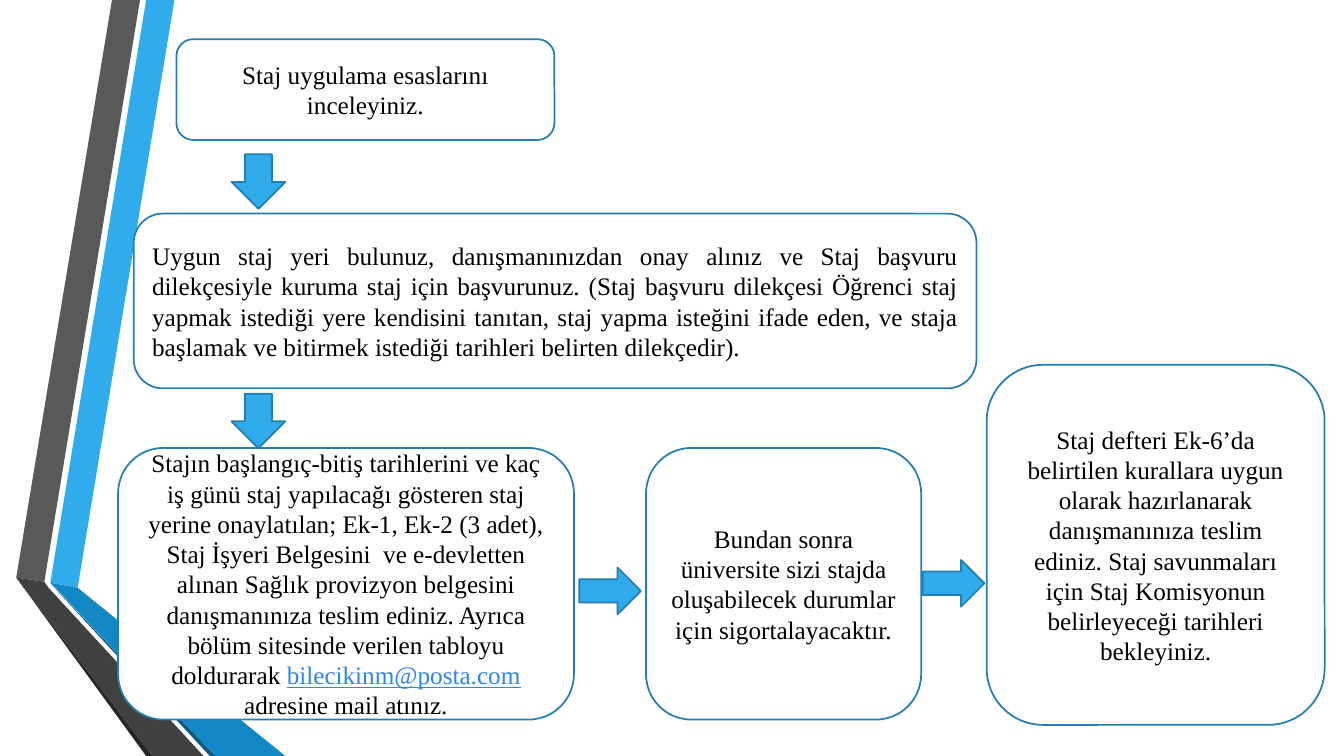
from dataclasses import dataclass

from pptx import Presentation
from pptx.dml.color import RGBColor
from pptx.enum.shapes import MSO_SHAPE as Preset
from pptx.enum.text import MSO_ANCHOR as Anchor, PP_ALIGN as Align
from pptx.util import Pt


@dataclass(frozen=True)
class Theme:
    font: str = "Times New Roman"
    text_size: float = 18
    line_width: float = 1.25
    text: str = "000000"
    link: str = "3085ED"
    paper: str = "FFFFFF"
    outline: str = "247FAF"
    blue: str = "30ACEC"
    blue_fold: str = "1287C3"
    blue_edge: str = "0C5A82"
    gray: str = "595959"
    gray_fold: str = "404040"
    gray_edge: str = "262626"


THEME = Theme()

RIBBONS = [
    (THEME.blue, [(36, 416.2), (55.5, 419.8), (124.6, 0), (104.4, 0)]),
    (THEME.gray, [(100, 0), (80, 0), (11.6, 412.6), (31.7, 415.5)]),
    (THEME.gray_edge, [(11.6, 412.6), (104.4, 540), (108.8, 540)]),
    (THEME.blue_edge, [(36, 416.8), (149.8, 540), (154, 540)]),
    (THEME.blue_fold, [(36, 416.2), (154, 540), (203.8, 540), (55.5, 419.8)]),
    (THEME.gray_fold, [(11.6, 412.6), (108.8, 540), (145.4, 540),
                       (34.6, 419.8), (31.7, 415.5)]),
]

EMAIL = "bilecikinm@posta.com"

STEPS = [
    ((126, 28, 270, 72), Align.CENTER, ["Staj uygulama esaslarını inceleyiniz."]),
    ((95.5, 152.6, 602, 124.8), Align.JUSTIFY, [
        "Uygun staj yeri bulunuz, danışmanınızdan onay alınız ve Staj başvuru "
        "dilekçesiyle kuruma staj için başvurunuz. (Staj başvuru dilekçesi Öğrenci "
        "staj yapmak istediği yere kendisini tanıtan, staj yapma isteğini ifade "
        "eden, ve staja başlamak ve bitirmek istediği tarihleri belirten "
        "dilekçedir)."]),
    ((84.4, 320, 325.6, 194), Align.CENTER, [
        "Stajın başlangıç-bitiş tarihlerini ve kaç iş günü staj yapılacağı gösteren "
        "staj yerine onaylatılan; Ek-1, Ek-2 (3 adet), Staj İşyeri Belgesini  ve "
        "e-devletten alınan Sağlık provizyon belgesini danışmanınıza teslim ediniz. "
        "Ayrıca bölüm sitesinde verilen tabloyu doldurarak ",
        EMAIL,
        " adresine mail atınız."]),
    ((461.5, 320, 196.5, 194), Align.CENTER, [
        "Bundan sonra üniversite sizi stajda oluşabilecek durumlar için "
        "sigortalayacaktır."]),
    ((704.8, 260.6, 241.4, 257.2), Align.CENTER, [
        "Staj defteri Ek-6’da belirtilen kurallara uygun olarak hazırlanarak "
        "danışmanınıza teslim ediniz. Staj savunmaları için Staj Komisyonun "
        "belirleyeceği tarihleri bekleyiniz."]),
]

DOWN_SIZE = (38.4, 39)
RIGHT_SIZE = (44, 33.4)
ARROWS = [
    (Preset.DOWN_ARROW, (165.4, 110.2, *DOWN_SIZE)),
    (Preset.DOWN_ARROW, (165.4, 281.2, *DOWN_SIZE)),
    (Preset.RIGHT_ARROW, (413.8, 405.4, *RIGHT_SIZE)),
    (Preset.RIGHT_ARROW, (659.2, 400, *RIGHT_SIZE)),
]


def color(code):
    return RGBColor.from_string(code)


def fill_shape(shape, code):
    shape.shadow.inherit = False
    shape.fill.solid()
    shape.fill.fore_color.rgb = color(code)


def add_ribbon(slide, code, points):
    start, *rest = [(Pt(x), Pt(y)) for x, y in points]
    builder = slide.shapes.build_freeform(*start)
    builder.add_line_segments(rest, close=True)
    shape = builder.convert_to_shape()
    fill_shape(shape, code)
    shape.line.fill.background()


def add_outlined(slide, preset, box, code):
    shape = slide.shapes.add_shape(preset, *map(Pt, box))
    fill_shape(shape, code)
    shape.line.color.rgb = color(THEME.outline)
    shape.line.width = Pt(THEME.line_width)
    return shape


def add_step(slide, box, alignment, texts):
    shape = add_outlined(slide, Preset.FLOWCHART_ALTERNATE_PROCESS, box, THEME.paper)
    frame = shape.text_frame
    frame.word_wrap = True
    frame.vertical_anchor = Anchor.MIDDLE
    paragraph = frame.paragraphs[0]
    paragraph.alignment = alignment
    paragraph.font.name = THEME.font
    paragraph.font.size = Pt(THEME.text_size)
    for text in texts:
        run = paragraph.add_run()
        run.text = text
        is_link = text == EMAIL
        run.font.color.rgb = color(THEME.link if is_link else THEME.text)
        run.font.underline = is_link


def main():
    presentation = Presentation()
    presentation.slide_width = Pt(960)
    presentation.slide_height = Pt(540)
    slide = presentation.slides.add_slide(presentation.slide_layouts[6])
    for code, points in RIBBONS:
        add_ribbon(slide, code, points)
    for box, alignment, texts in STEPS:
        add_step(slide, box, alignment, texts)
    for preset, box in ARROWS:
        add_outlined(slide, preset, box, THEME.blue)
    presentation.save("out.pptx")


if __name__ == "__main__":
    main()
